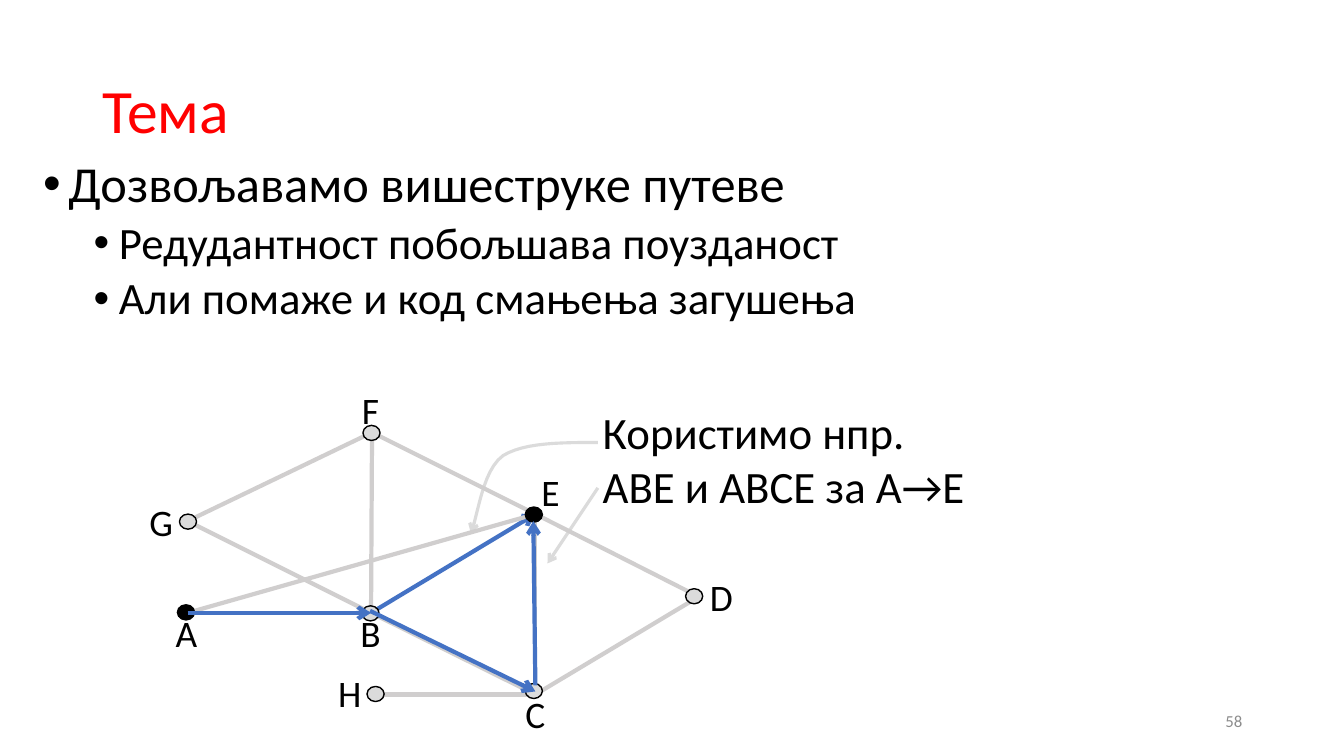
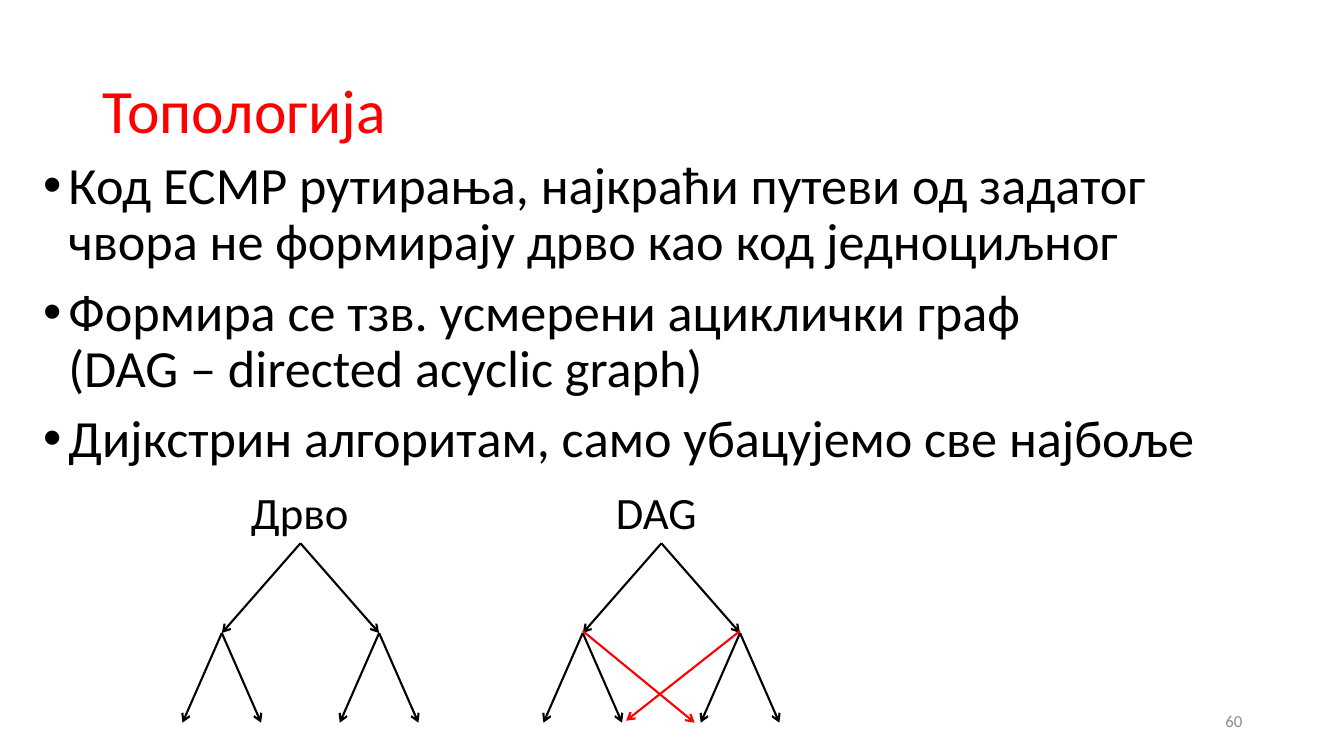
from collections import namedtuple

from lxml import etree
from pptx import Presentation
from pptx.dml.color import RGBColor
from pptx.enum.shapes import MSO_CONNECTOR, MSO_SHAPE
from pptx.enum.text import MSO_ANCHOR, MSO_AUTO_SIZE, PP_ALIGN
from pptx.oxml.ns import qn
from pptx.util import Pt

STRAIGHT, OVAL = MSO_CONNECTOR.STRAIGHT, MSO_SHAPE.OVAL
TOP, MIDDLE = MSO_ANCHOR.TOP, MSO_ANCHOR.MIDDLE
LEFT, CENTER, RIGHT = PP_ALIGN.LEFT, PP_ALIGN.CENTER, PP_ALIGN.RIGHT
GROW = MSO_AUTO_SIZE.SHAPE_TO_FIT_TEXT

PX = 9144  # 100 px to the inch
FONT = "Calibri"
BLACK, RED, BLUE = "000000", "FF0000", "4472C4"
LINK_GRAY, LIGHT_GRAY, NUMBER_GRAY = "D0CECE", "DBDBDB", "8C8C8C"

# link, dot and label are offsets from the corner of the network
Node = namedtuple("Node", "link dot label label_width")
NODES = {
    "A": Node((48, 229), (38, 221), (26, 221), 42),
    "B": Node((230, 229), (221, 222), (209, 221), 41),
    "C": Node((393, 310), (383, 299), (373, 301), 40),
    "D": Node((555, 213), (542, 205), (556, 185), 43),
    "E": Node((393, 131), (383, 124), (389, 81), 38),
    "F": Node((231, 50), (222, 43), (211, 0), 37),
    "G": Node((48, 138), (40, 131), (0, 111), 44),
    "H": Node((230, 310), (226, 302), (187, 281), 44),
}
LINKS = ["AB", "BC", "CE", "BE", "AE", "BF", "BG", "GF", "FE", "ED", "CD", "CH"]
ROUTES = [
    ((48, 229), (230, 229)),
    ((229, 227), (393, 307)),
    ((393, 301), (391, 138)),
]


def px(*values):
    return [round(v * PX) for v in values]


def rgb(color):
    return RGBColor.from_string(color)


def style_line(shape, color, width, arrow=None):
    """Set colour and width; arrow is "headEnd" (start) or "tailEnd" (end)."""
    shape.line.color.rgb = rgb(color)
    shape.line.width = Pt(width)
    if arrow:
        ln = shape.line._get_or_add_ln()
        etree.SubElement(ln, qn(f"a:{arrow}"), type="arrow")


def add_line(shapes, start, end, color, width, arrow=None):
    line = shapes.add_connector(STRAIGHT, *px(*start, *end))
    style_line(line, color, width, arrow)
    etree.SubElement(line._element.spPr, qn("a:effectLst"))


def style_paragraph(p, text, size, color=BLACK, align=LEFT):
    p.text = text
    p.alignment = align
    p.font.name = FONT
    p.font.size = Pt(size)
    p.font.color.rgb = rgb(color)


def add_text(shapes, box, text, size, color=BLACK, align=LEFT, anchor=TOP, wrap=False):
    tb = shapes.add_textbox(*px(*box))
    tf = tb.text_frame
    tf.word_wrap = wrap
    tf.vertical_anchor = anchor
    if not wrap:
        tf.auto_size = GROW
    style_paragraph(tf.paragraphs[0], text, size, color, align)
    return tf.paragraphs[0]


def add_bullets(shapes, box, items):
    """Place (level, size, text) items as a bulleted list."""
    tf = shapes.add_textbox(*px(*box)).text_frame
    tf.word_wrap = True
    for i, (level, size, text) in enumerate(items):
        p = tf.add_paragraph() if i else tf.paragraphs[0]
        style_paragraph(p, text, size)
        p.level = level
        p.line_spacing = 0.9
        p.space_before = Pt(5 if level else 10)
        pPr = p._p.get_or_add_pPr()
        pPr.set("marL", str(px(25 + 50 * level)[0]))
        pPr.set("indent", str(px(-25)[0]))
        bullet_font = etree.Element(qn("a:buFont"), typeface="Arial")
        bullet = etree.Element(qn("a:buChar"), char="•")
        at = pPr.index(pPr.find(qn("a:defRPr")))
        pPr[at:at] = [bullet_font, bullet]


def add_base_slide(prs, title, number, body_width, items):
    """Add a blank slide with title, bulleted body and slide number."""
    shapes = prs.slides.add_slide(prs.slide_layouts[6]).shapes
    p = add_text(shapes, (92, 40, 1150, 145), title, 44, RED, anchor=MIDDLE, wrap=True)
    p.line_spacing = 0.9
    add_bullets(shapes, (33, 153, body_width, 522), items)
    add_text(shapes, (942, 695, 300, 40), number, 12, NUMBER_GRAY, RIGHT, MIDDLE, True)
    return shapes


def bezier(p0, p1, p2, p3, steps=12):
    """Return the points of a cubic curve after its start."""
    points = []
    for i in range(1, steps + 1):
        t = i / steps
        weights = ((1 - t) ** 3, 3 * t * (1 - t) ** 2, 3 * t * t * (1 - t), t ** 3)
        points.append(tuple(
            sum(w * c for w, c in zip(weights, axis))
            for axis in zip(p0, p1, p2, p3)
        ))
    return points


def add_callout(shapes, left, top):
    """Note on the routes used, with two pointers into the network."""
    def at(x, y):
        return left + x, top + y

    add_line(shapes, at(126, 87), at(76, 162), LIGHT_GRAY, 2.25, "tailEnd")
    add_text(shapes, (*at(121, 0), 386, 118), "Користимо нпр. \nABE и ABCE за A→E", 32)
    start, bend, end = at(0, 132), at(32, 55), at(126, 42)
    points = bezier(start, at(7, 116), at(11, 70), bend)
    points += bezier(bend, at(53, 42), at(90, 42), end)
    builder = shapes.build_freeform(*px(*start))
    builder.add_line_segments([px(*point) for point in points], close=False)
    curve = builder.convert_to_shape()
    curve.shadow.inherit = False
    curve.fill.background()
    style_line(curve, LIGHT_GRAY, 2.25, "headEnd")


def add_network(shapes, left, top):
    group = shapes.add_group_shape().shapes

    def at(point):
        return left + point[0], top + point[1]

    for link in LINKS:
        start, end = (at(NODES[name].link) for name in link)
        if link == "BE":
            add_line(group, start, end, BLUE, 3, "tailEnd")
        else:
            add_line(group, start, end, LINK_GRAY, 3)
    for name, node in NODES.items():
        dot = group.add_shape(OVAL, *px(*at(node.dot), 17, 15))
        dot.shadow.inherit = False
        dot.fill.solid()
        dot.fill.fore_color.rgb = rgb(BLACK if name in "AE" else LIGHT_GRAY)
        style_line(dot, BLACK, 1)
    for name, node in NODES.items():
        add_text(group, (*at(node.label), node.label_width, 55), name, 26.7,
                 align=CENTER, anchor=MIDDLE)
    for start, end in ROUTES:
        add_line(group, at(start), at(end), BLUE, 3, "tailEnd")


def add_tree(shapes, left, top, extra_edges=()):
    """Two-level binary tree, plus edges that turn it into a DAG."""
    group = shapes.add_group_shape().shapes
    level, half = 89, 39

    def add_edge(start, end, color=BLACK):
        add_line(group, (left + start[0], top + start[1]),
                 (left + end[0], top + end[1]), color, 1.5, "tailEnd")

    root = (3 * half, 0)
    for child_x in (half, 5 * half):
        child = (child_x, level)
        add_edge(root, child)
        for leaf_x in (child_x - half, child_x + half):
            add_edge(child, (leaf_x, 2 * level))
    for start, end in extra_edges:
        add_edge(start, end, RED)


def build_topic_slide(prs):
    shapes = add_base_slide(prs, "Тема", "58", 1242, [
        (0, 36, "Дозвољавамо вишеструке путеве"),
        (1, 32, "Редудантност побољшава поузданост"),
        (1, 32, "Али помаже и код смањења загушења"),
    ])
    add_callout(shapes, 467, 397)
    add_network(shapes, 138, 379)


def build_topology_slide(prs):
    shapes = add_base_slide(prs, "Топологија", "60", 1208, [
        (0, 37.3, "Код ECMP рутирања, најкраћи путеви од задатог "
                  "чвора не формирају дрво као код једноциљног"),
        (0, 37.3, "Формира се тзв. усмерени ациклички граф \n"
                  "(DAG – directed acyclic graph)"),
        (0, 37.3, "Дијкстрин алгоритам, само убацујемо све најбоље"),
    ])
    add_tree(shapes, 181, 539)
    add_tree(shapes, 539, 539, [((195, 87), (82, 176)), ((39, 87), (150, 178))])
    add_text(shapes, (239, 476, 118, 64), "Дрво", 32)
    add_text(shapes, (601, 476, 101, 64), "DAG", 32)


def main():
    prs = Presentation()
    prs.slide_width, prs.slide_height = px(1333, 750)
    build_topic_slide(prs)
    build_topology_slide(prs)
    prs.save("out.pptx")


if __name__ == "__main__":
    main()
